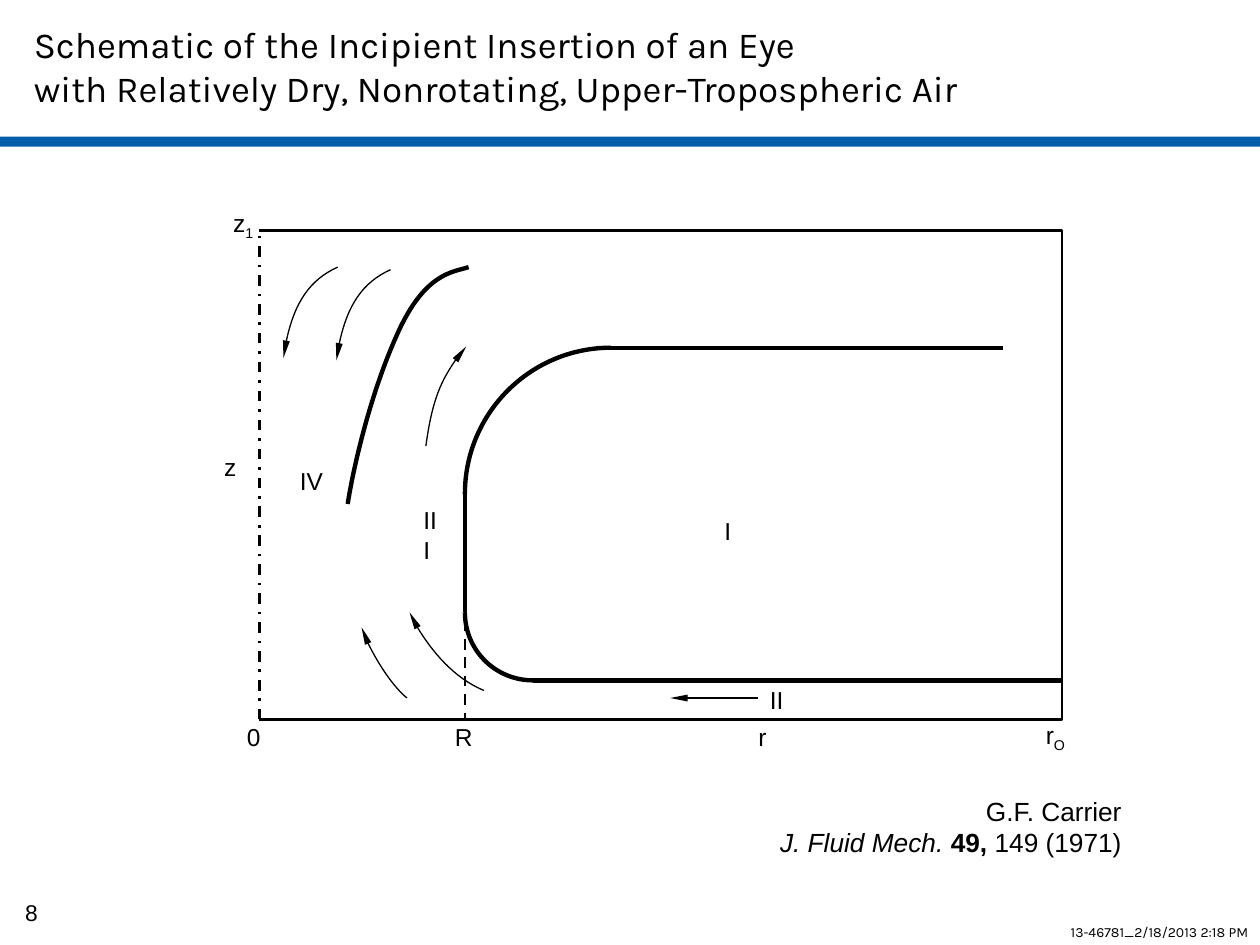
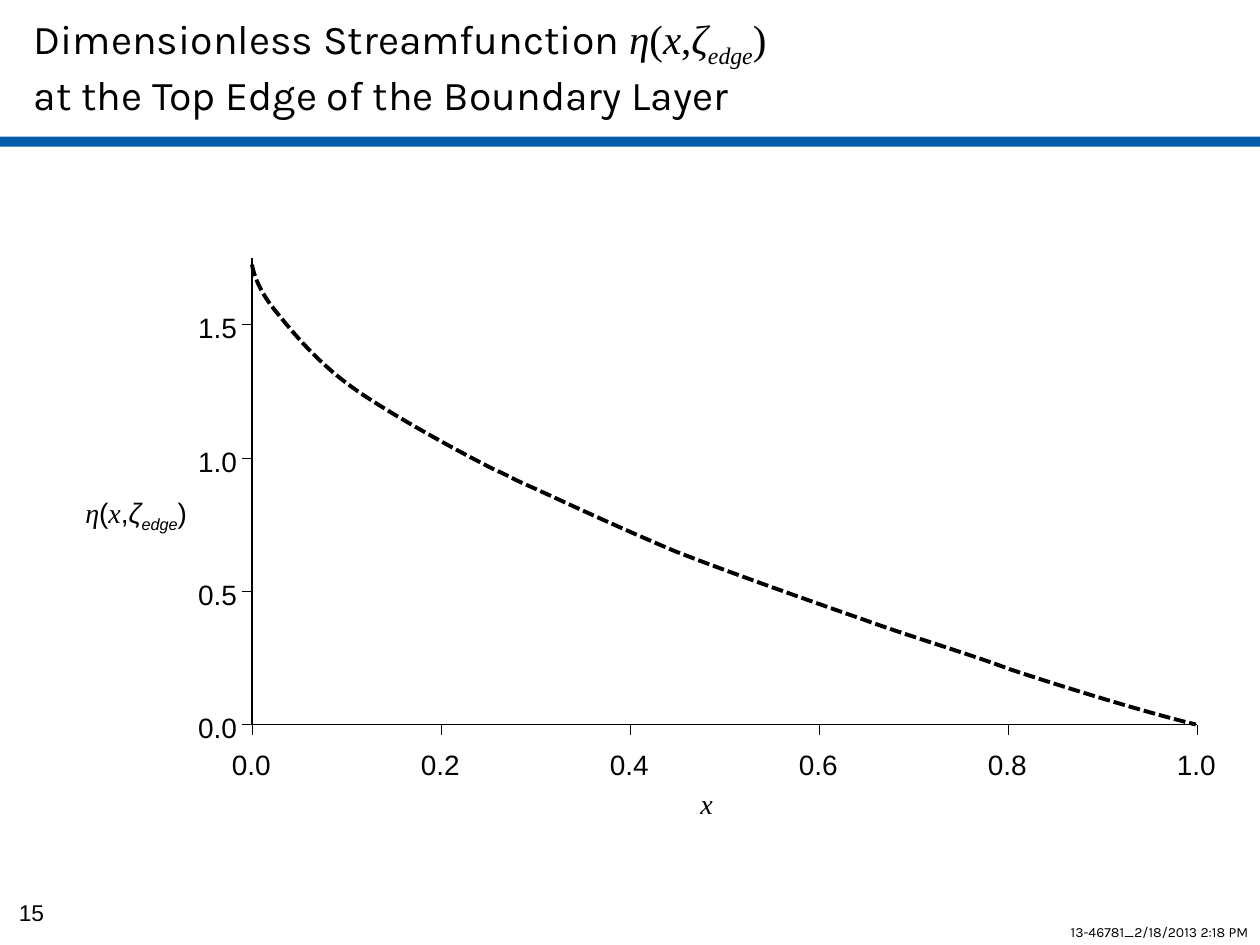
from dataclasses import dataclass

from lxml import etree
from pptx import Presentation
from pptx.dml.color import RGBColor
from pptx.enum.dml import MSO_LINE
from pptx.enum.shapes import MSO_CONNECTOR, MSO_SHAPE
from pptx.enum.text import MSO_ANCHOR, PP_ALIGN
from pptx.oxml.ns import qn
from pptx.util import Inches, Pt

STRAIGHT, RECTANGLE = MSO_CONNECTOR.STRAIGHT, MSO_SHAPE.RECTANGLE
LEFT, CENTER, RIGHT = PP_ALIGN.LEFT, PP_ALIGN.CENTER, PP_ALIGN.RIGHT
TOP, MIDDLE, BOTTOM = MSO_ANCHOR.TOP, MSO_ANCHOR.MIDDLE, MSO_ANCHOR.BOTTOM
DASH, DASH_DOT, SHORT_DASH = MSO_LINE.DASH, MSO_LINE.DASH_DOT, MSO_LINE.SQUARE_DOT

BLACK, WHITE, BLUE = "000000", "FFFFFF", "005DAA"
TITLE_FONT, LABEL_FONT, MATH_FONT = "Karla", "Arial", "Times New Roman"
STAMP = "13-46781_2/18/2013 2:18 PM"


@dataclass
class Box:
    """An area in inches, divided into columns and rows."""
    left: float
    top: float
    width: float
    height: float
    columns: int
    rows: int

    def point(self, column, row):
        return (Inches(self.left + self.width * column / self.columns),
                Inches(self.top + self.height * row / self.rows))

    def area(self, column, row, wide, high):
        return (*self.point(column, row),
                Inches(self.width * wide / self.columns),
                Inches(self.height * high / self.rows))


# One column or row is a hundredth of an inch in every box.
PAGE = Box(0, 0, 10, 7.5, 1000, 750)
DIAGRAM = Box(2.06, 1.83, 6.37, 3.88, 637, 388)
PLOT = Box(2, 2.05, 7.5, 3.7, 750, 370)


def color(value):
    return RGBColor.from_string(value)


def add_panel(page, area, fill):
    panel = page.shapes.add_shape(RECTANGLE, *area)
    panel.shadow.inherit = False
    panel.fill.solid()
    panel.fill.fore_color.rgb = color(fill)
    panel.line.fill.background()
    return panel


def add_text(page, area, parts, size, **layout):
    write(page.shapes.add_textbox(*area), parts, size, **layout)


def write(box, parts, size, font=LABEL_FONT, align=LEFT, anchor=MIDDLE,
          margins=(0, 0), wrap=True):
    """Parts are strings or (text, marks): i italic, b bold, s subscript, m math font."""
    frame = box.text_frame
    frame.word_wrap = wrap
    frame.vertical_anchor = anchor
    frame.margin_left = frame.margin_right = Inches(margins[0])
    frame.margin_top = frame.margin_bottom = Inches(margins[1])
    para = frame.paragraphs[0]
    para.alignment = align
    for part in [parts] if isinstance(parts, str) else parts:
        text, marks = (part, "") if isinstance(part, str) else part
        if text == "\n":
            para.add_line_break()
            continue
        span = para.add_run()
        span.text = text
        span.font.name = MATH_FONT if "m" in marks else font
        span.font.size = Pt(size)
        span.font.color.rgb = color(BLACK)
        span.font.italic = "i" in marks
        span.font.bold = "b" in marks
        if "s" in marks:
            span._r.get_or_add_rPr().set("baseline", "-25000")


def style_line(shape, weight, dash=None, arrow=False):
    shape.line.color.rgb = color(BLACK)
    shape.line.width = Pt(weight)
    if dash:
        shape.line.dash_style = dash
    if arrow:
        etree.SubElement(shape.line._get_or_add_ln(), qn("a:tailEnd"),
                         type="triangle", w="sm", len="lg")


def add_line(page, box, start, end, weight, dash=None, arrow=False):
    line = page.shapes.add_connector(STRAIGHT, *box.point(*start), *box.point(*end))
    style_line(line, weight, dash, arrow)
    etree.SubElement(line._element.spPr, qn("a:effectLst"))


def add_outline(page, box, points, weight, dash=None, arrow=False):
    start, *others = [box.point(*point) for point in points]
    builder = page.shapes.build_freeform(*start)
    builder.add_line_segments(others, close=False)
    outline = builder.convert_to_shape()
    outline.shadow.inherit = False
    outline.fill.background()
    style_line(outline, weight, dash, arrow)
    return outline


def add_curve(page, box, knots, weight, dash=None, arrow=False):
    """Draw a chain of cubic curves: a start, then three points for each curve."""
    curve = add_outline(page, box, knots, weight, dash, arrow)
    trace = next(curve._element.iter(qn("a:path")))
    segments = trace.findall(qn("a:lnTo"))
    for first in range(0, len(segments), 3):
        cubic = etree.SubElement(trace, qn("a:cubicBezTo"))
        for segment in segments[first:first + 3]:
            cubic.append(segment[0])
            trace.remove(segment)


def add_page(deck, title, title_size, number):
    page = deck.slides.add_slide(deck.slide_layouts[6])
    add_panel(page, PAGE.area(0, 108.4, 1000, 8), BLUE)
    add_text(page, PAGE.area(825, 733, 166, 13), STAMP, 8, font=TITLE_FONT,
             align=RIGHT, anchor=TOP)
    add_text(page, PAGE.area(17, 6.3, 767, 92), title, title_size, font=TITLE_FONT,
             margins=(0.1, 0.05))
    add_text(page, PAGE.area(0, 708, 50, 42), number, 13, align=CENTER, anchor=TOP,
             margins=(0.11, 0.05))
    return page


def draw_eye_diagram(page, box):
    right, floor, wall = box.columns, box.rows, 163

    add_outline(page, box, [(0, 0), (right, 0), (right, floor), (0, floor)], 1.5)
    add_line(page, box, (0, floor), (0, 0), 1.5, DASH_DOT)
    add_line(page, box, (wall, 295), (wall, floor), 1.5, DASH)

    for start, end in (((279, 93), (590, 93)), ((wall, 303), (wall, 209)),
                       ((217, 357), (right, 357))):
        add_line(page, box, start, end, 2.5)
    upper_corner = [(279, 93), (215, 93), (wall, 145), (wall, 209)]
    lower_corner = [(wall, 303), (wall, 333), (187, 357), (217, 357)]
    eye_edge = [(70, 217), (74, 191), (87, 132), (109, 83),
                (131, 33), (154, 33), (166, 29)]
    for knots in (upper_corner, lower_corner, eye_edge):
        add_curve(page, box, knots, 2.5)

    sinking = [(62, 29), (40, 39), (24, 62), (19, 101)]
    flows = [
        sinking,
        [(column + 42, row + 2) for column, row in sinking],
        [(132, 171), (137, 134), (148, 110), (164, 92)],
        [(178, 365), (154, 355), (128, 324), (119, 303)],
        [(117, 371), (106, 362), (86, 332), (81, 315)],
    ]
    for knots in flows:
        add_curve(page, box, knots, 0.75, arrow=True)
    add_line(page, box, (396, 371), (326, 371), 0.75, arrow=True)

    axis_row = floor + 2
    labels = [
        ("II", 405, 361, 11), ("I", 369, 227, 6), ("III", 130, 230, 15),
        ("IV", 32, 187, 19), ("z", -28, 176, 10), (["z", ("1", "s")], -21, -16, 18),
        ("0", -10, axis_row, 22), ("R", 155, axis_row, 15), ("r", 396, axis_row, 7),
        (["r", ("O", "s")], 624, axis_row, 17),
    ]
    for parts, column, row, wide in labels:
        add_text(page, box.area(column, row, wide, 23), parts, 14)


def draw_streamfunction_plot(page, box):
    right, floor, tick = box.columns, box.rows, 8
    add_line(page, box, (0, 0), (0, floor), 1)
    add_line(page, box, (0, floor), (right, floor), 1)

    for index in range(6):
        column = right * index / 5
        add_line(page, box, (column, floor), (column, floor + tick), 0.5)
        add_text(page, box.area(column - 25, floor + 18, 49, 27), f"{index / 5:.1f}", 16,
                 align=CENTER, anchor=BOTTOM)
    for index in range(4):
        row = floor - 105.7 * index
        add_line(page, box, (0, row), (-tick, row), 0.5)
        label = add_panel(page, box.area(-43, row - 11.3, 31, 27), WHITE)
        write(label, f"{index / 2:.1f}", 16, align=RIGHT, wrap=False)

    add_text(page, box.area(339, 419, 49, 27), [("x ", "im")], 16,
             align=CENTER, anchor=BOTTOM)
    add_text(page, box.area(-151, 192, 118, 27),
             [("η", "im"), "(", ("x", "im"), ",", ("ζ", "i"), ("edge", "is"), ")"], 16,
             align=CENTER, anchor=BOTTOM)

    streamfunction = [
        (0, 5), (1, 11), (5, 25), (18, 41), (31, 57), (50, 81), (79, 102),
        (108, 123), (167, 155), (191, 167), (215, 178), (200, 172), (225, 183),
        (249, 194), (294, 215), (337, 233), (381, 250), (443, 272), (486, 287),
        (522, 300), (572, 315), (601, 326), (628, 335), (700, 358), (749, floor),
    ]
    add_curve(page, box, streamfunction, 2.25, SHORT_DASH)


def add_eye_page(deck):
    title = ["Schematic of the Incipient Insertion of an Eye", "\n",
             "with Relatively Dry, Nonrotating, Upper-Tropospheric Air"]
    page = add_page(deck, title, 21, "8")
    draw_eye_diagram(page, DIAGRAM)
    citation = ["G.F. Carrier", "\n", ("J. Fluid Mech. ", "i"), ("49,", "b"), " 149 (1971)"]
    add_text(page, PAGE.area(0, 626, 900, 76), citation, 15, align=RIGHT, anchor=TOP,
             margins=(0.1, 0.05))


def add_streamfunction_page(deck):
    title = ["Dimensionless Streamfunction ", ("η", "im"), ("(", "m"), ("x", "im"),
             (",", "m"), ("ζ", "im"), ("edge", "ims"), (")", "m"), "\n",
             "at the Top Edge of the Boundary Layer"]
    page = add_page(deck, title, 23.4, "15")
    add_panel(page, PAGE.area(33, 167, 942, 492), WHITE)
    draw_streamfunction_plot(page, PLOT)


def main():
    deck = Presentation()
    deck.slide_width, deck.slide_height = Inches(PAGE.width), Inches(PAGE.height)
    add_eye_page(deck)
    add_streamfunction_page(deck)
    deck.save("out.pptx")


if __name__ == "__main__":
    main()
